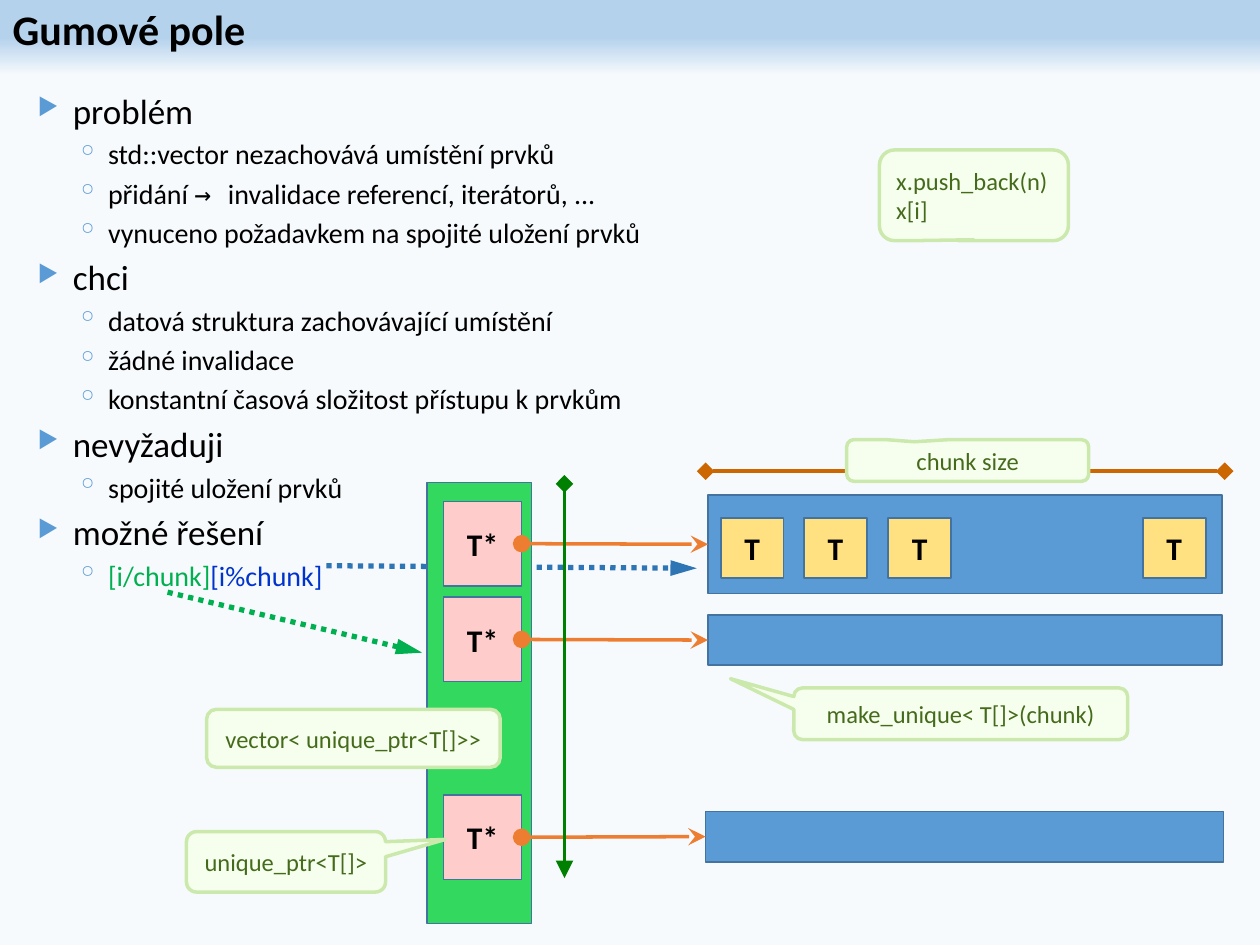
from dataclasses import dataclass
from typing import Optional

import lxml.etree
import pptx
import pptx.dml.color
import pptx.enum.dml
import pptx.enum.shapes
import pptx.enum.text
import pptx.oxml.ns
import pptx.util

RGB = pptx.dml.color.RGBColor
SHAPE = pptx.enum.shapes.MSO_SHAPE
ALIGN = pptx.enum.text.PP_ALIGN
MIDDLE = pptx.enum.text.MSO_ANCHOR.MIDDLE

WIDTH, HEIGHT = pptx.util.Inches(10), pptx.util.Inches(7.5)
COLUMN, ROW = WIDTH / 100, HEIGHT / 75

BLACK = RGB(0x00, 0x00, 0x00)
SKY = RGB(0xB5, 0xD2, 0xEC)
PALE = RGB(0xF7, 0xFA, 0xFD)
BLUE = RGB(0x5B, 0x9B, 0xD5)
OUTLINE = RGB(0x43, 0x73, 0x9E)
YELLOW = RGB(0xFF, 0xE1, 0x81)
PINK = RGB(0xFF, 0xCC, 0xCC)
VECTOR_GREEN = RGB(0x33, 0xD9, 0x5E)
NOTE_FILL = RGB(0xF6, 0xFF, 0xED)
NOTE_LINE = RGB(0xCC, 0xE9, 0xAD)
NOTE_TEXT = RGB(0x45, 0x6A, 0x1C)
ORANGE = RGB(0xED, 0x7D, 0x31)
BROWN = RGB(0xCC, 0x66, 0x00)
DEEP_BLUE = RGB(0x2E, 0x75, 0xB6)
INDEX_BLUE = RGB(0x00, 0x33, 0xCC)
INDEX_GREEN = RGB(0x00, 0xB0, 0x50)
DARK_GREEN = RGB(0x00, 0x80, 0x00)

TITLE_FONT = {"name": "Calibri", "size": pptx.util.Pt(24), "bold": True}
CELL_FONT = {"name": "Calibri", "size": pptx.util.Pt(18), "bold": True}
NOTE_FONT = {"name": "Calibri", "size": pptx.util.Pt(14), "bold": False}


@dataclass
class Box:
    left: float
    top: float
    width: float
    height: float

    def place(self) -> tuple:
        return (round(self.left * COLUMN), round(self.top * ROW),
                round(self.width * COLUMN), round(self.height * ROW))


@dataclass
class Note:
    box: Box
    lines: list
    tip: tuple
    align: ALIGN = ALIGN.CENTER


@dataclass
class Arrow:
    start: tuple
    end: tuple
    color: RGB
    width: float = 2
    head: Optional[str] = None
    tail: str = "triangle"
    dotted: bool = False


@dataclass
class Level:
    indent: float
    hanging: float
    size: float
    before: float
    bullet: str
    bullet_percent: int


LEVELS = [Level(4, 2.8, 20, 4, "▶", 68), Level(6.8, 2.5, 16, 3.2, "◦", 100)]

OUTLINE_TEXT = [
    (0, "problém"),
    (1, "std::vector nezachovává umístění prvků"),
    (1, [("přidání ", "Calibri", BLACK), ("→ ", "DejaVu Sans Mono", BLACK),
         ("invalidace referencí, iterátorů, ...", "Calibri", BLACK)]),
    (1, "vynuceno požadavkem na spojité uložení prvků"),
    (0, "chci"),
    (1, "datová struktura zachovávající umístění"),
    (1, "žádné invalidace"),
    (1, "konstantní časová složitost přístupu k prvkům"),
    (0, "nevyžaduji"),
    (1, "spojité uložení prvků"),
    (0, "možné řešení"),
    (1, [("[i/chunk]", "Calibri", INDEX_GREEN), ("[i%chunk]", "Calibri", INDEX_BLUE)]),
]

NOTES = [
    Note(Box(63, 54.6, 26.5, 4.1), ["make_unique< T[]>(chunk)"], (-0.69, -0.68)),
    Note(Box(16.4, 56.3, 23.3, 4.6), ["vector< unique_ptr<T[]>>"], (0.08, 0.5)),
    Note(Box(69.8, 11.9, 15, 7.2), ["x.push_back(n)", "x[i]"], (0, 0.49), ALIGN.LEFT),
    Note(Box(14.8, 66, 15.8, 4.8), ["unique_ptr<T[]>"], (0.8, -0.37)),
]
SIZE_NOTE = Note(Box(67.2, 34.9, 19.2, 3.3), ["chunk size"], (-0.22, -0.45))


def apply(target, values: dict) -> None:
    for name, value in values.items():
        setattr(target, name, value)


def add_element(parent, tag: str, **attributes):
    return lxml.etree.SubElement(parent, pptx.oxml.ns.qn(tag), attributes)


def add_run(paragraph, text: str, font: dict, color: RGB) -> None:
    run = paragraph.add_run()
    run.text = text
    apply(run.font, font)
    run.font.color.rgb = color


def write_lines(shape, lines: list, font: dict, color: RGB, align: ALIGN) -> None:
    frame = shape.text_frame
    apply(frame, {"word_wrap": True, "vertical_anchor": MIDDLE})
    for number, line in enumerate(lines):
        paragraph = frame.add_paragraph() if number else frame.paragraphs[0]
        paragraph.alignment = align
        add_run(paragraph, line, font, color)


def add_box(slide, box: Box, fill: RGB, line: RGB = OUTLINE, width: float = 1,
            kind: SHAPE = SHAPE.RECTANGLE):
    shape = slide.shapes.add_shape(kind, *box.place())
    shape.shadow.inherit = False
    shape.fill.solid()
    shape.fill.fore_color.rgb = fill
    shape.line.color.rgb = line
    shape.line.width = pptx.util.Pt(width)
    return shape


def add_cell(slide, box: Box, text: str, fill: RGB):
    shape = add_box(slide, box, fill)
    write_lines(shape, [text], CELL_FONT, BLACK, ALIGN.CENTER)
    return shape


def add_note(slide, note: Note) -> None:
    shape = add_box(slide, note.box, NOTE_FILL, NOTE_LINE, 2, SHAPE.ROUNDED_RECTANGULAR_CALLOUT)
    shape.adjustments[0], shape.adjustments[1] = note.tip
    write_lines(shape, note.lines, NOTE_FONT, NOTE_TEXT, note.align)


def add_arrow(slide, arrow: Arrow):
    (x1, y1), (x2, y2) = arrow.start, arrow.end
    connector = slide.shapes.add_connector(
        pptx.enum.shapes.MSO_CONNECTOR.STRAIGHT,
        round(x1 * COLUMN), round(y1 * ROW), round(x2 * COLUMN), round(y2 * ROW))
    connector.line.color.rgb = arrow.color
    connector.line.width = pptx.util.Pt(arrow.width)
    if arrow.dotted:
        connector.line.dash_style = pptx.enum.dml.MSO_LINE.ROUND_DOT
    for tag, kind in (("a:headEnd", arrow.head), ("a:tailEnd", arrow.tail)):
        if kind:
            add_element(connector.get_or_add_ln(), tag, type=kind,
                        w="med" if arrow.dotted else "lg", len="lg")
    add_element(connector._element.spPr, "a:effectLst")
    return connector


def paint_background(slide) -> None:
    fill = slide.background.fill
    fill.gradient()
    fill.gradient_angle = 270
    stops = next(slide._element.iter(pptx.oxml.ns.qn("a:gsLst")))
    for stop in list(stops):
        stops.remove(stop)
    for percent, color in ((0, SKY), (4, SKY), (8, PALE)):
        stop = add_element(stops, "a:gs", pos=str(percent * 1000))
        add_element(stop, "a:srgbClr", val=str(color))


def add_title(slide, text: str) -> None:
    title = slide.shapes.title
    apply(title, dict(zip(("left", "top", "width", "height"), Box(0, 0, 100, 5.1).place())))
    title.text_frame.auto_size = pptx.enum.text.MSO_AUTO_SIZE.NONE
    write_lines(title, [text], TITLE_FONT, BLACK, ALIGN.LEFT)
    title.text_frame.paragraphs[0].line_spacing = 0.9


def add_outline(slide) -> None:
    frame = slide.shapes.add_textbox(*Box(0.8, 6.6, 53.7, 41.4).place()).text_frame
    frame.word_wrap = True
    for number, (depth, content) in enumerate(OUTLINE_TEXT):
        level = LEVELS[depth]
        paragraph = frame.add_paragraph() if number else frame.paragraphs[0]
        apply(paragraph, {"level": depth, "space_before": pptx.util.Pt(level.before)})
        properties = paragraph._p.get_or_add_pPr()
        properties.set("marL", str(round(level.indent * COLUMN)))
        properties.set("indent", str(round(-level.hanging * COLUMN)))
        add_element(add_element(properties, "a:buClr"), "a:srgbClr", val=str(BLUE))
        add_element(properties, "a:buSzPct", val=str(level.bullet_percent * 1000))
        add_element(properties, "a:buChar", char=level.bullet)
        runs = [(content, "Calibri", BLACK)] if isinstance(content, str) else content
        for text, name, color in runs:
            add_run(paragraph, text, {"name": name, "size": pptx.util.Pt(level.size)}, color)


def add_storage(slide) -> None:
    chunks = [add_box(slide, box, BLUE) for box in (
        Box(56.2, 39.3, 40.8, 7.8), Box(56.2, 48.8, 40.8, 4), Box(56, 64.4, 41.1, 4))]
    for left in (57.2, 63.8, 70.5, 90.7):
        add_cell(slide, Box(left, 41.1, 5, 4.8), "T", YELLOW)
    add_box(slide, Box(33.9, 38.3, 8.3, 35), VECTOR_GREEN)
    for top, chunk in zip((39.8, 47.4, 63.1), chunks):
        pointer = add_cell(slide, Box(35.2, top, 6.2, 6.7), "T*", PINK)
        link = add_arrow(slide, Arrow((0, 0), (1, 1), ORANGE, head="oval", tail="stealth"))
        link.begin_connect(pointer, 3)
        link.end_connect(chunk, 1)


def main() -> None:
    presentation = pptx.Presentation()
    apply(presentation, {"slide_width": WIDTH, "slide_height": HEIGHT})
    slide = presentation.slides.add_slide(presentation.slide_layouts[5])
    paint_background(slide)
    add_title(slide, "Gumové pole")
    add_arrow(slide, Arrow((25.9, 44.9), (55.3, 45.1), DEEP_BLUE, 3, dotted=True))
    add_storage(slide)
    add_outline(slide)
    for note in NOTES:
        add_note(slide, note)
    add_arrow(slide, Arrow((56, 37.4), (97.2, 37.4), BROWN, head="diamond", tail="diamond"))
    add_note(slide, SIZE_NOTE)
    add_arrow(slide, Arrow((13.3, 47), (33.5, 51.8), INDEX_GREEN, 3, dotted=True))
    add_arrow(slide, Arrow((44.8, 38.4), (44.8, 69.7), DARK_GREEN, head="diamond"))
    presentation.save("out.pptx")


if __name__ == "__main__":
    main()
